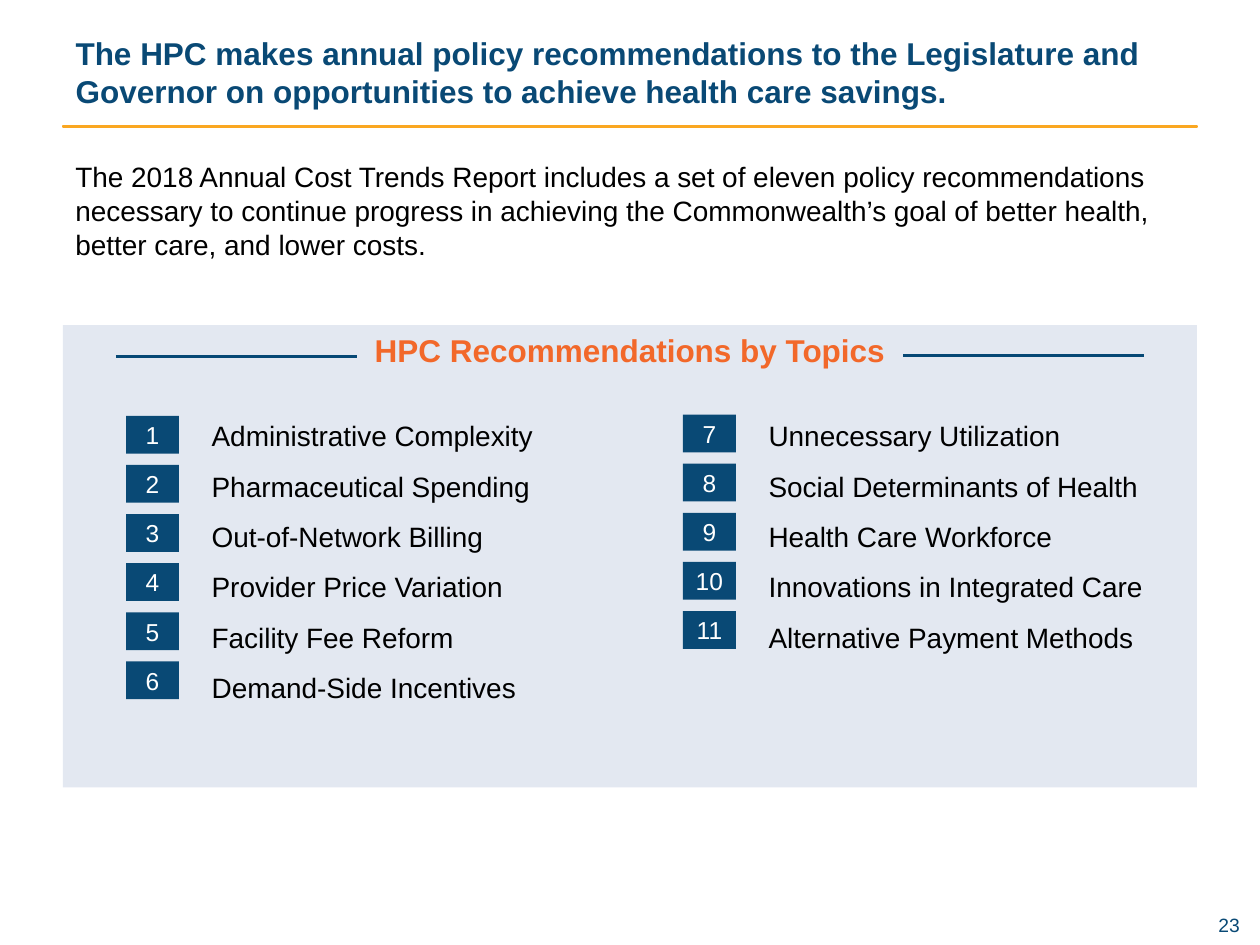
from lxml.etree import SubElement
from pptx import Presentation
from pptx.dml.color import RGBColor as Color
from pptx.enum.shapes import MSO_CONNECTOR as Connector, MSO_SHAPE as Shape
from pptx.enum.text import MSO_ANCHOR as Anchor, MSO_AUTO_SIZE as AutoSize, PP_ALIGN as Align
from pptx.oxml.ns import qn
from pptx.util import Inches, Pt

COLUMNS, ROWS = 20, 15
WIDTH, HEIGHT = Inches(10), Inches(7.5)
MARGIN, CONTENT = 1, 18
COLORS = {
    "navy": "094975",
    "rule": "064875",
    "gold": "FAA721",
    "orange": "F2682A",
    "panel": "E3E8F1",
    "black": "000000",
    "white": "FFFFFF",
}
TITLE = ("The HPC makes annual policy recommendations to the Legislature and "
         "Governor on opportunities to achieve health care savings.")
INTRO = ("The 2018 Annual Cost Trends Report includes a set of eleven policy "
         "recommendations necessary to continue progress in achieving the "
         "Commonwealth’s goal of better health, better care, and lower costs.")
TOPICS = [
    ["Administrative Complexity", "Pharmaceutical Spending",
     "Out-of-Network Billing", "Provider Price Variation",
     "Facility Fee Reform", "Demand-Side Incentives"],
    ["Unnecessary Utilization", "Social Determinants of Health",
     "Health Care Workforce", "Innovations in Integrated Care",
     "Alternative Payment Methods"],
]
BADGE_LEFT, BADGE_TOP = [2, 10.84], [6.6, 6.58]
BADGE_STEP = 0.78
LIST_AREAS = [(3.16, 6.28, 7, 5.04), (12, 6.28, 6.5, 4.24)]


def grid(left, top, width, height):
    across, down = WIDTH / COLUMNS, HEIGHT / ROWS
    return [round(value) for value in
            (left * across, top * down, width * across, height * down)]


def rgb(name):
    return Color.from_string(COLORS[name])


def apply(target, values):
    for name, value in values.items():
        setattr(target, name, value)


def place(shape, area):
    apply(shape, dict(zip(("left", "top", "width", "height"), grid(*area))))


def write(shape, lines, size, color, bold=False, align=Align.LEFT,
          anchor=Anchor.TOP, spacing=1.0, plain_list=False):
    frame = shape.text_frame
    apply(frame, {"word_wrap": True, "auto_size": AutoSize.NONE,
                  "vertical_anchor": anchor})
    for index, line in enumerate(lines):
        para = frame.add_paragraph() if index else frame.paragraphs[0]
        span = para.add_run()
        span.text = line
        apply(para, {"alignment": align, "line_spacing": spacing,
                     "space_before": Pt(0), "space_after": Pt(0)})
        if plain_list:
            properties = para._p.get_or_add_pPr()
            properties.set("marL", "0")
            properties.set("indent", "0")
            SubElement(properties, qn("a:buNone"))
        apply(span.font, {"name": "Arial", "size": Pt(size), "bold": bold})
        span.font.color.rgb = rgb(color)
    return frame


def add_block(page, area, fill):
    block = page.shapes.add_shape(Shape.RECTANGLE, *grid(*area))
    block.shadow.inherit = False
    block.fill.solid()
    block.fill.fore_color.rgb = rgb(fill)
    block.line.fill.background()
    return block


def add_line(page, left, right, top):
    start_x, start_y, width, _ = grid(left, top, right - left, 0)
    line = page.shapes.add_connector(
        Connector.STRAIGHT, start_x, start_y, start_x + width, start_y)
    line.line.color.rgb = rgb("rule")
    line.line.width = Pt(2)
    SubElement(line._element.spPr, qn("a:effectLst"))


def add_header(page):
    divider = add_block(page, (MARGIN, 2, CONTENT, 0.02), "gold")
    divider.line.color.rgb = rgb("gold")
    divider.line.width = Pt(1)
    place(page.shapes.title, (MARGIN, 0.46, CONTENT, 1.36))
    write(page.shapes.title, [TITLE], 18, "navy", bold=True, anchor=Anchor.MIDDLE)
    intro = page.shapes.add_textbox(*grid(MARGIN, 2.44, CONTENT, 2.36))
    write(intro, [INTRO], 16, "black")


def add_panel(page):
    panel = add_block(page, (MARGIN, 5.16, CONTENT, 7.34), "panel")
    write(panel, ["HPC Recommendations by Topics"], 18, "orange",
          bold=True, align=Align.CENTER)
    add_line(page, 1.84, 5.66, 5.66)
    add_line(page, 14.34, 18.16, 5.64)


def add_topics(page, column, first_number):
    for row in range(len(TOPICS[column])):
        top = BADGE_TOP[column] + row * BADGE_STEP
        badge = add_block(page, (BADGE_LEFT[column], top, 0.84, 0.6), "navy")
        write(badge, [str(first_number + row)], 14, "white",
              align=Align.CENTER, anchor=Anchor.MIDDLE)
    topics = page.placeholders[column + 1]
    place(topics, LIST_AREAS[column])
    write(topics, TOPICS[column], 16, "black", spacing=1.5, plain_list=True)
    page.shapes._spTree.append(topics._element)


def add_page_number(page):
    box = page.shapes.add_textbox(*grid(14.84, 14.5, 4.84, 0.38))
    frame = write(box, ["23"], 11, "navy", align=Align.RIGHT)
    apply(frame, dict.fromkeys(
        ("margin_left", "margin_top", "margin_right", "margin_bottom"), 0))


def main():
    deck = Presentation()
    apply(deck, {"slide_width": WIDTH, "slide_height": HEIGHT})
    page = deck.slides.add_slide(deck.slide_layouts.get_by_name("Two Content"))
    add_header(page)
    add_panel(page)
    first_number = 1
    for column, topics in enumerate(TOPICS):
        add_topics(page, column, first_number)
        first_number += len(topics)
    add_page_number(page)
    deck.save("out.pptx")


if __name__ == "__main__":
    main()
